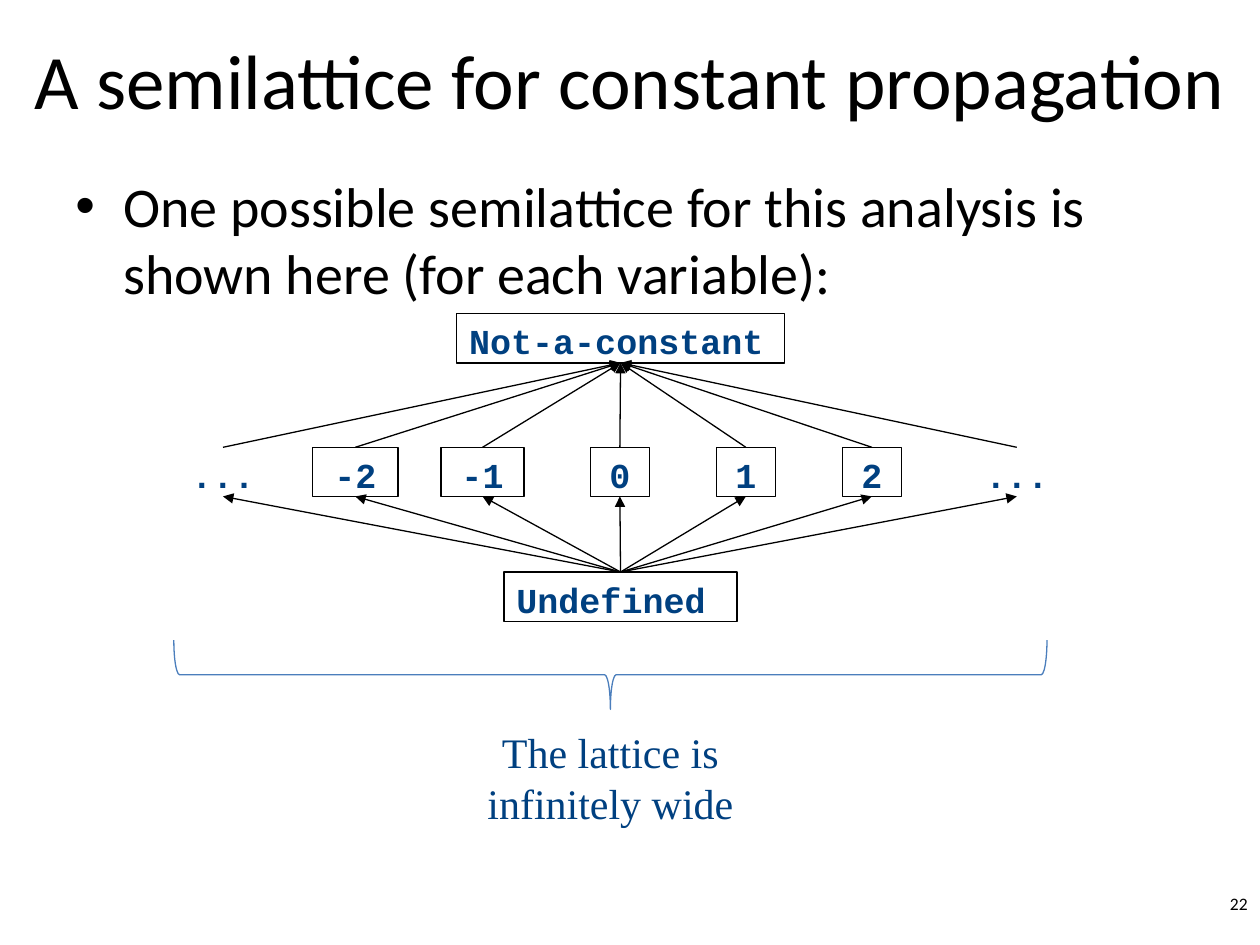
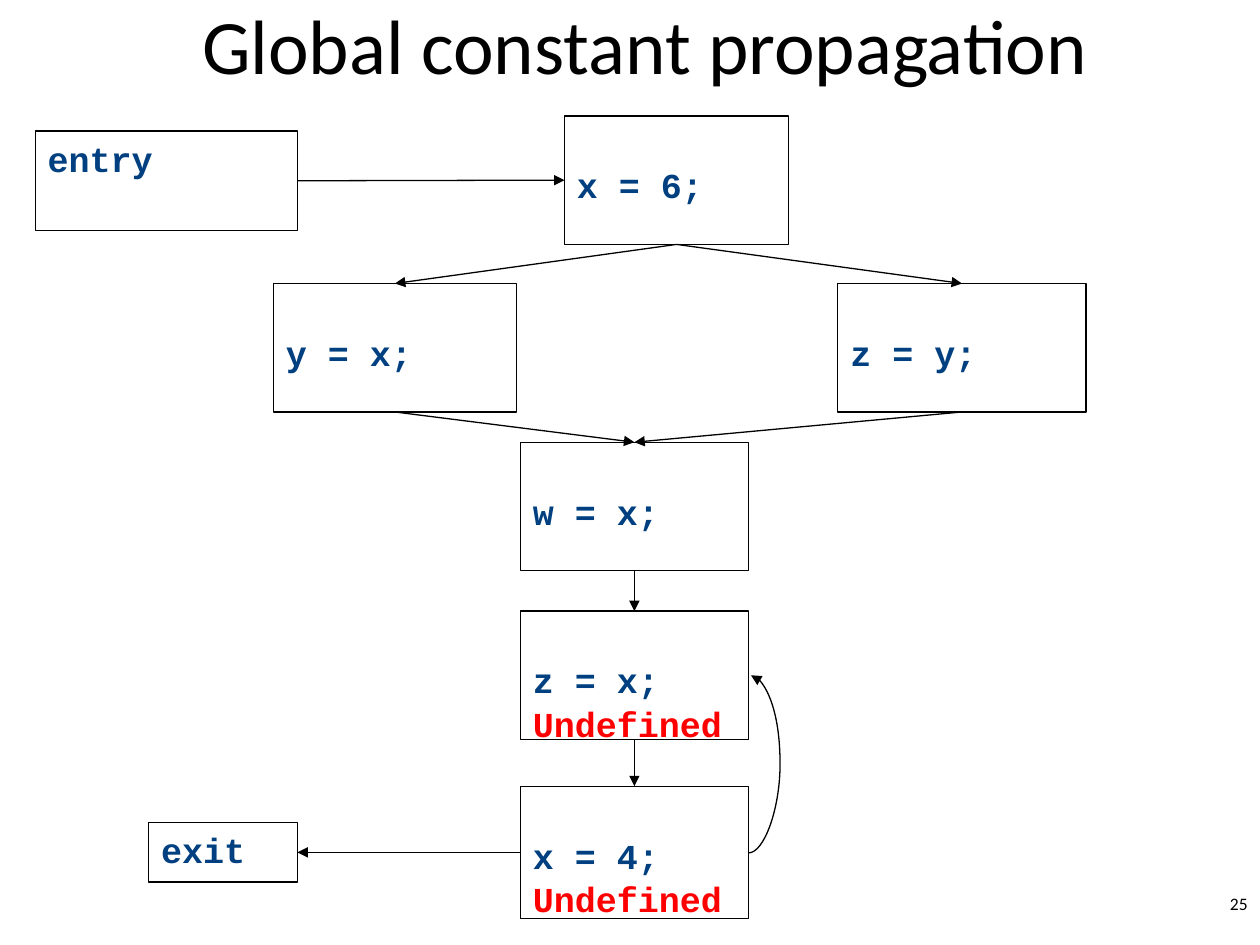
from collections import namedtuple
from dataclasses import dataclass

from lxml import etree
from pptx import Presentation
from pptx.dml.color import RGBColor as RGB
from pptx.enum.shapes import MSO_CONNECTOR as Conn, MSO_SHAPE as Shape
from pptx.enum.text import MSO_ANCHOR as Anchor, MSO_AUTO_SIZE as AutoSize, PP_ALIGN as Align
from pptx.oxml.ns import qn
from pptx.util import Inches, Pt

Box = namedtuple("Box", "x y w h")
TOP, LEFT, BOTTOM, RIGHT = range(4)


@dataclass(frozen=True)
class Theme:
    black: RGB = RGB(0, 0, 0)
    code: RGB = RGB(0x00, 0x40, 0x80)
    fact: RGB = RGB(0xFF, 0, 0)
    brace: RGB = RGB(0x4B, 0x7E, 0xBC)
    sans: str = "Calibri"
    mono: str = "Courier New"
    serif: str = "Times New Roman"
    title_size: int = 44
    body_size: int = 32
    caption_size: int = 24
    code_size: int = 20
    number_size: int = 10
    line: float = 0.75


T = Theme()


# Shared helpers
def emu(box):
    return [Inches(v) for v in box]


def style(p, font, size, color, bold=False, align=Align.LEFT):
    p.alignment = align
    for r in p.runs:
        r.font.name, r.font.size, r.font.bold = font, Pt(size), bold
        r.font.color.rgb = color


def add_text(s, box, text, font, size, color, align=Align.LEFT, bold=False):
    tb = s.shapes.add_textbox(*emu(box))
    tb.text_frame.word_wrap = True
    tb.text_frame.text = text
    style(tb.text_frame.paragraphs[0], font, size, color, bold, align)
    return tb


def set_line(sp, color=T.black):
    sp.line.color.rgb = color
    sp.line.width = Pt(T.line)


def add_code_box(s, box, code, fact="", align=Align.LEFT, inset=0.05):
    """Outlined box with a line of code and, below it, an optional fact."""
    sp = s.shapes.add_shape(Shape.RECTANGLE, *emu(box))
    sp.shadow.inherit = False
    sp.fill.background()
    set_line(sp)
    tf = sp.text_frame
    tf.word_wrap = True
    tf.vertical_anchor = Anchor.TOP
    tf.margin_top, tf.margin_bottom = Inches(inset), 0
    tf.text = code
    style(tf.paragraphs[0], T.mono, T.code_size, T.code, True, align)
    if fact:
        p = tf.add_paragraph()
        p.text = fact
        p.space_before = Pt(1)
        style(p, T.mono, T.code_size, T.fact, True, align)
    return sp


def add_arrow(s, start=(0, 0), end=(0, 0), kind=Conn.STRAIGHT):
    cn = s.shapes.add_connector(kind, *emu(start), *emu(end))
    set_line(cn)
    head = etree.SubElement(cn.line._get_or_add_ln(), qn("a:tailEnd"))
    head.set("type", "triangle")
    etree.SubElement(cn._element.spPr, qn("a:effectLst"))
    return cn


def join(s, src, src_side, dst, dst_side):
    cn = add_arrow(s)
    cn.begin_connect(src, src_side)
    cn.end_connect(dst, dst_side)


def new_slide(prs, title, title_box, number):
    s = prs.slides.add_slide(prs.slide_layouts[5])
    sp = s.shapes.title
    sp.left, sp.top, sp.width, sp.height = emu(title_box)
    tf = sp.text_frame
    tf.text = title
    tf.auto_size = AutoSize.NONE
    tf.vertical_anchor = Anchor.MIDDLE
    style(tf.paragraphs[0], T.sans, T.title_size, T.black, align=Align.CENTER)
    add_text(s, Box(7.92, 7.04, 2.08, 0.3), number, T.sans, T.number_size,
             T.black, Align.RIGHT)
    return s


# Slide regions
def bullet(s, box, text):
    tb = add_text(s, box, text, T.sans, T.body_size, T.black)
    pPr = tb.text_frame.paragraphs[0]._p.get_or_add_pPr()
    indent = Inches(0.38)
    pPr.set("marL", str(indent))
    pPr.set("indent", str(-indent))
    etree.SubElement(pPr, qn("a:buFont")).set("typeface", "Arial")
    etree.SubElement(pPr, qn("a:buChar")).set("char", "•")


def lattice(s, box):
    node_h = 0.39
    mid = box.x + box.w / 2

    def node_box(center, y, w):
        return Box(center - w / 2, y, w, node_h)

    top = add_code_box(s, node_box(mid, box.y, 2.6), "Not-a-constant")
    bottom = add_code_box(s, node_box(mid, box.y + box.h - node_h, 1.85), "Undefined")

    # Row of values: label, centre from the left of the box, width
    values = [("...", 0.39, 0.79), ("-2", 1.44, 0.68), ("-1", 2.45, 0.66),
              ("0", 3.54, 0.47), ("1", 4.54, 0.47), ("2", 5.54, 0.47),
              ("...", 6.69, 0.79)]
    for label, center, w in values:
        place = node_box(box.x + center, box.y + 1.06, w)
        if label == "...":
            node = add_text(s, place, label, T.mono, T.code_size, T.code,
                            Align.CENTER, True)
        else:
            node = add_code_box(s, place, label, align=Align.CENTER)
        join(s, bottom, TOP, node, BOTTOM)
        join(s, node, TOP, top, BOTTOM)


def width_note(s, box, text):
    # A left brace turned to open upwards across the box
    depth = 0.55
    turned = Box(box.x + (box.w - depth) / 2, box.y + (depth - box.w) / 2, depth, box.w)
    sp = s.shapes.add_shape(Shape.LEFT_BRACE, *emu(turned))
    sp.rotation = 270
    sp.shadow.inherit = False
    sp.fill.background()
    set_line(sp, T.brace)
    caption_w = 3
    add_text(s, Box(box.x + (box.w - caption_w) / 2, box.y + 0.64, caption_w, box.h - 0.64),
             text, T.serif, T.caption_size, T.code, Align.CENTER)


def flow_graph(s, box):
    block_h, blank_line = 1.02, 0.38

    def block(x, y, w, code, fact="", h=block_h, inset=blank_line):
        return add_code_box(s, Box(box.x + x, box.y + y, w, h), code, fact, inset=inset)

    # Blocks
    entry = block(0, 0.12, 2.08, "entry", h=0.79, inset=0.05)
    first = block(4.2, 0, 1.78, "x = 6;")
    left = block(1.89, 1.33, 1.93, "y = x;")
    right = block(6.37, 1.33, 1.97, "z = y;")
    merge = block(3.85, 2.59, 1.81, "w = x;")
    loop = block(3.85, 3.93, 1.81, "z = x;", "Undefined")
    last = block(3.85, 5.32, 1.81, "x = 4;", "Undefined", h=1.05)
    leave = block(0.9, 5.61, 1.18, "exit", h=0.47, inset=0.05)

    # Control flow
    for edge in [(entry, RIGHT, first, LEFT),
                 (first, BOTTOM, left, TOP), (first, BOTTOM, right, TOP),
                 (left, BOTTOM, merge, TOP), (right, BOTTOM, merge, TOP),
                 (merge, BOTTOM, loop, TOP), (loop, BOTTOM, last, TOP),
                 (last, LEFT, leave, RIGHT)]:
        join(s, *edge)

    # Back edge, bulging to the right of the loop
    run, bulge = 0.02, 0.25
    x = box.x + 5.66
    back = add_arrow(s, (x, box.y + 5.85), (x + run, box.y + 4.44), Conn.CURVE)
    guide = etree.SubElement(back._element.spPr.prstGeom.get_or_add_avLst(), qn("a:gd"))
    guide.set("name", "adj1")
    guide.set("fmla", f"val {round(bulge / run * 100000)}")


def main():
    prs = Presentation()
    prs.slide_width, prs.slide_height = Inches(10), Inches(7.5)

    s = new_slide(prs, "A semilattice for constant propagation", Box(0, 0, 10, 1.25), "22")
    bullet(s, Box(0.5, 1.31, 9, 1.34),
           "One possible semilattice for this analysis is shown here (for each variable):")
    lattice(s, Box(1.38, 2.49, 7.09, 2.44))
    width_note(s, Box(1.38, 5.08, 6.93, 1.5), "The lattice is infinitely wide")

    s = new_slide(prs, "Global constant propagation", Box(0.87, -0.28, 8.5, 1.25), "25")
    flow_graph(s, Box(0.28, 0.92, 8.34, 6.37))

    prs.save("out.pptx")


if __name__ == "__main__":
    main()
